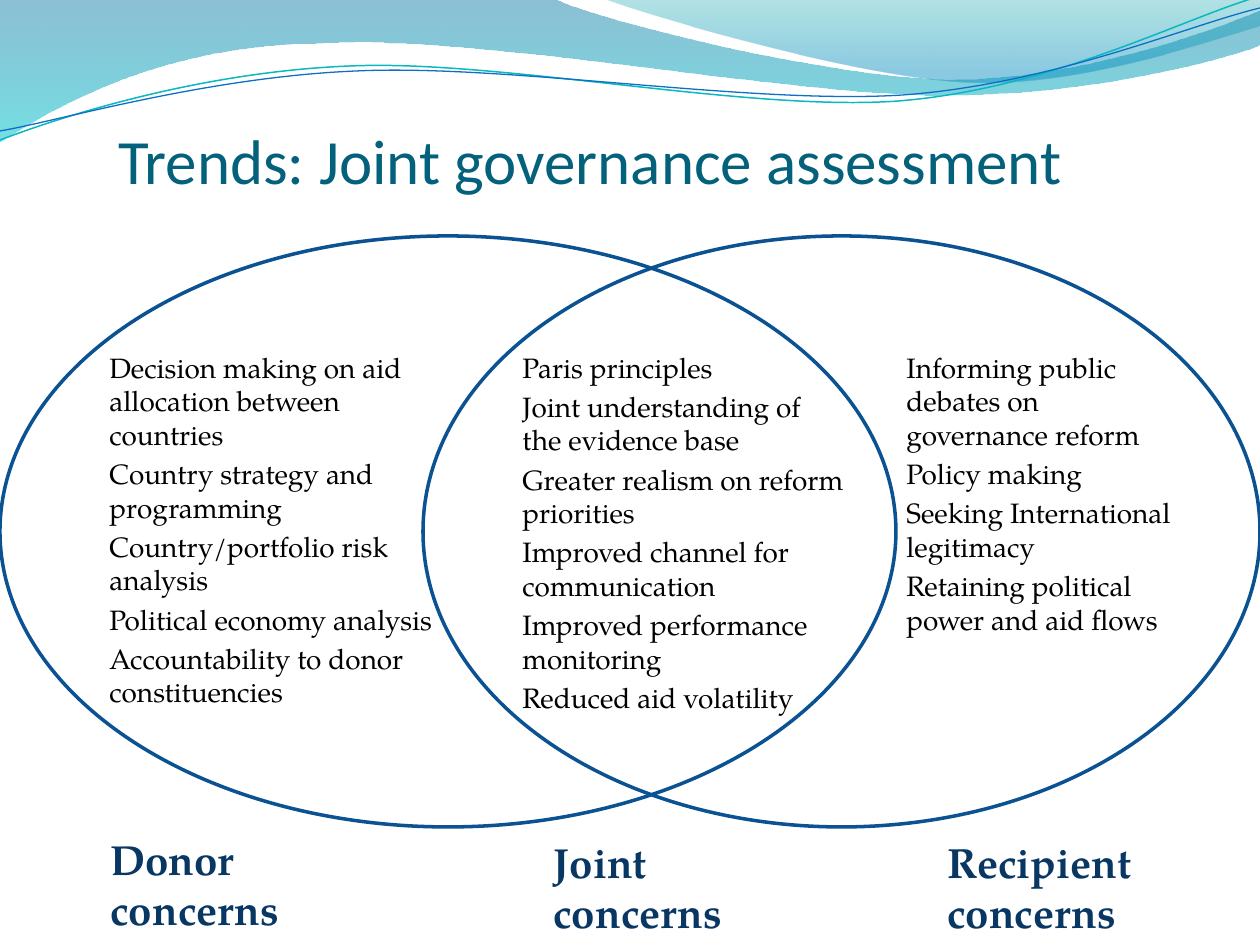
from lxml.etree import SubElement
from pptx import Presentation
from pptx.dml.color import RGBColor
from pptx.enum.shapes import MSO_SHAPE
from pptx.enum.text import MSO_ANCHOR, PP_ALIGN
from pptx.oxml.ns import qn
from pptx.util import Emu, Pt

SERIF = "TeX Gyre Pagella"
TITLE = "Trends: Joint governance assessment"

# Left, width, points
CONCERN_LISTS = [
    (59, 394, [
        "Decision making on aid allocation between countries",
        "Country strategy and programming",
        "Country/portfolio risk analysis",
        "Political economy analysis",
        "Accountability to donor constituencies",
    ]),
    (472, 384, [
        "Paris principles",
        "Joint understanding of the evidence base",
        "Greater realism on reform priorities",
        "Improved channel for communication",
        "Improved performance monitoring",
        "Reduced aid volatility",
    ]),
    (856, 344, [
        "Informing public debates on governance reform",
        "Policy making",
        "Seeking International legitimacy",
        "Retaining political power and aid flows",
    ]),
]
LIST_TOP, LIST_HEIGHT, LIST_INDENT = 344, 476, 38

# Text, left, top, width
CIRCLE_LABELS = [
    ("Donor concerns", 98, 827, 217),
    ("Joint concerns", 541, 830, 237),
    ("Recipient concerns", 935, 830, 217),
]
LABEL_HEIGHT = 115

# Left, width
CIRCLES = [(0, 896), (423, 837)]
CIRCLE_TOP, CIRCLE_HEIGHT = 236, 591

# Outline: start point, then steps of one point (line) or three (Bezier curve).
# Gradient stops: position, colour, opacity in percent
WAVE_BANDS = [
    ([[(0, -1)], [(554, -1)],
      [(600, 21), (837, 79), (955, 79)], [(1075, 79), (1207, 33), (1260, 11)],
      [(1261, 45)],
      [(1239, 55), (1096, 96), (940, 95)], [(784, 95), (481, 35), (324, 43)],
      [(163, 44), (58, 105), (-1, 142)]],
     [(0, "0074A1", 45), (1, "00C6CF", 55)]),
    ([[(604, -1)],
      [(641, 14), (859, 78), (969, 82)], [(1079, 87), (1211, 40), (1260, 26)],
      [(1260, 0)]],
     [(0, "00A1A9", 30), (0.8, "008BBF", 45)]),
]
# Outline, colour, width in points
WAVE_LINES = [
    ([[(0, 140)],
      [(60, 117), (199, 72), (349, 66)], [(498, 59), (747, 112), (898, 101)],
      [(1050, 89), (1182, 19), (1257, -3)]], "0AB8BF", 0.85),
    ([[(0, 131)],
      [(59, 121), (207, 77), (357, 71)], [(508, 64), (752, 105), (903, 95)],
      [(1053, 84), (1186, 26), (1260, 8)]], "0F6FC6", 0.75),
]


def px(length):
    return Emu(round(length * 914400 / 126))


def rgb(hex_colour):
    return RGBColor.from_string(hex_colour)


def add_wave(slide, outline, close):
    """Draw the outline through all its points, then bend each three-point step."""
    start, *rest = [(px(x), px(y)) for step in outline for x, y in step]
    builder = slide.shapes.build_freeform(*start)
    builder.add_line_segments(rest, close=close)
    wave = builder.convert_to_shape()
    wave.shadow.inherit = False

    segments = iter(list(wave._element.iter(qn("a:lnTo"))))
    for step in outline[1:]:
        parts = [next(segments) for _ in step]
        if len(parts) == 3:
            curve = SubElement(parts[0].getparent(), qn("a:cubicBezTo"))
            parts[0].addprevious(curve)
            for part in parts:
                curve.append(part[0])
                part.getparent().remove(part)
    return wave


def fill_downwards(wave, stops):
    wave.line.fill.background()
    wave.fill.gradient()
    wave.fill.gradient_angle = 270
    for stop, (position, colour, _) in zip(wave.fill.gradient_stops, stops):
        stop.position = position
        stop.color.rgb = rgb(colour)
    colours = wave._element.spPr.iter(qn("a:srgbClr"))
    for colour_element, (_, _, opacity) in zip(colours, stops):
        SubElement(colour_element, qn("a:alpha"), val=str(opacity * 1000))


def set_outline(shape, colour, width):
    shape.fill.background()
    shape.line.color.rgb = rgb(colour)
    shape.line.width = Pt(width)


def add_run(paragraph, text, font, size, colour, bold=False):
    run = paragraph.add_run()
    run.text = text
    run.font.name = font
    run.font.size = Pt(size)
    run.font.bold = bold
    run.font.color.rgb = rgb(colour)


def add_frame(slide, left, top, width, height):
    frame = slide.shapes.add_textbox(px(left), px(top), px(width), px(height)).text_frame
    frame.word_wrap = True
    return frame


def format_list_item(paragraph):
    properties = paragraph._p.get_or_add_pPr()
    properties.set("marL", str(px(LIST_INDENT)))
    properties.set("indent", "0")
    space_before = SubElement(properties, qn("a:spcBef"))
    SubElement(space_before, qn("a:spcPct"), val="20000")


def main():
    prs = Presentation()
    prs.slide_width, prs.slide_height = px(1260), px(945)
    slide = prs.slides.add_slide(prs.slide_layouts[5])

    for outline, stops in WAVE_BANDS:
        fill_downwards(add_wave(slide, outline, close=True), stops)
    for outline, colour, width in WAVE_LINES:
        set_outline(add_wave(slide, outline, close=False), colour, width)

    title = slide.shapes.title
    title.left, title.top, title.width, title.height = px(118), px(79), px(1105), px(118)
    frame = title.text_frame
    frame.margin_left = frame.margin_right = frame.margin_bottom = 0
    frame.vertical_anchor = MSO_ANCHOR.BOTTOM
    frame.paragraphs[0].alignment = PP_ALIGN.LEFT
    add_run(frame.paragraphs[0], TITLE, "Calibri", 36, "04617B")

    for left, width in CIRCLES:
        circle = slide.shapes.add_shape(MSO_SHAPE.OVAL, px(left), px(CIRCLE_TOP),
                                        px(width), px(CIRCLE_HEIGHT))
        circle.shadow.inherit = False
        set_outline(circle, "0B5292", 2)

    for left, width, concerns in CONCERN_LISTS:
        frame = add_frame(slide, left, LIST_TOP, width, LIST_HEIGHT)
        for i, concern in enumerate(concerns):
            paragraph = frame.add_paragraph() if i else frame.paragraphs[0]
            format_list_item(paragraph)
            add_run(paragraph, concern, SERIF, 16, "000000")

    for label, left, top, width in CIRCLE_LABELS:
        frame = add_frame(slide, left, top, width, LABEL_HEIGHT)
        add_run(frame.paragraphs[0], label, SERIF, 24, "083763", bold=True)

    prs.save("out.pptx")


if __name__ == "__main__":
    main()
